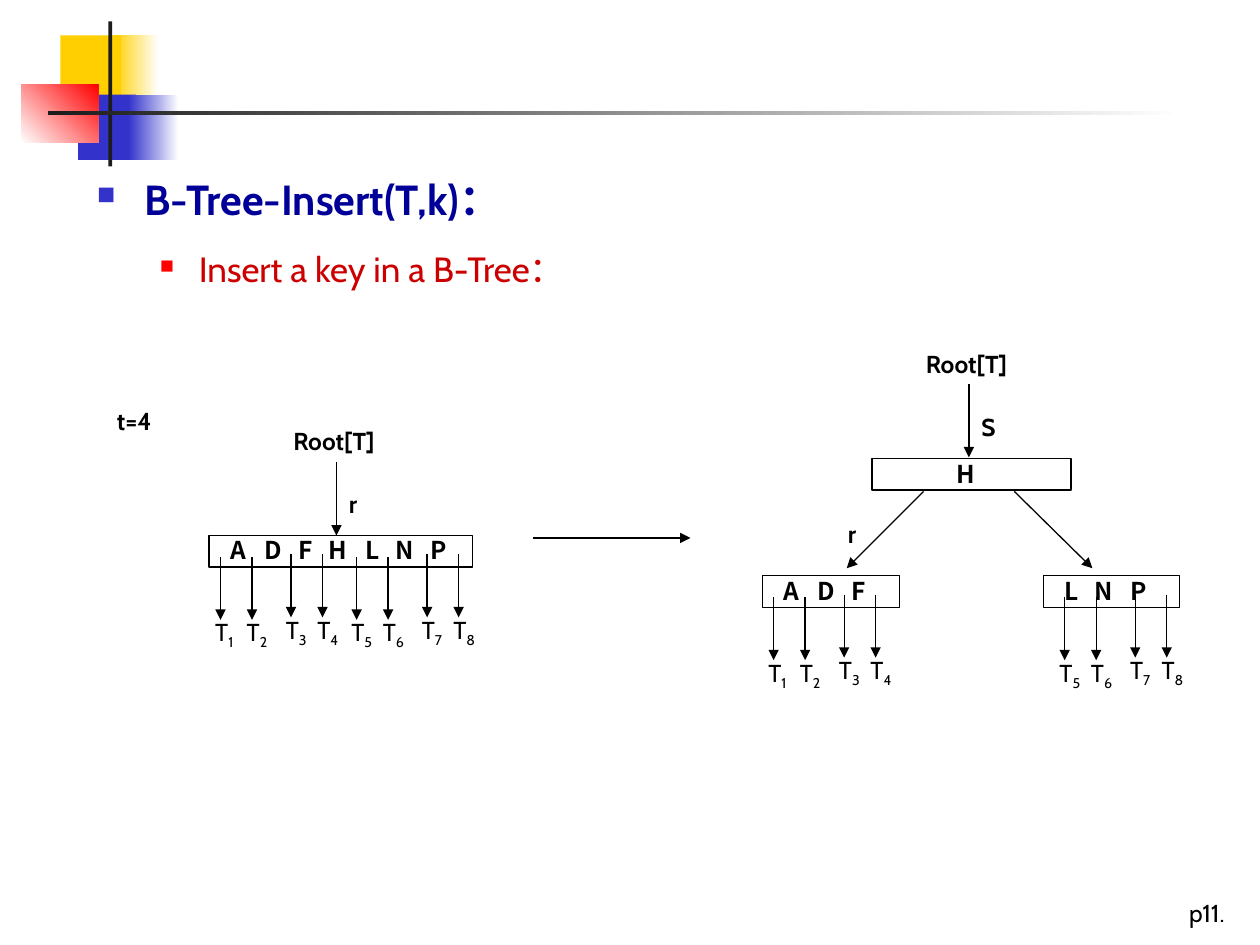
from lxml.etree import SubElement
from pptx import Presentation
from pptx.dml.color import RGBColor
from pptx.enum.shapes import MSO_CONNECTOR as CONN, MSO_SHAPE as SHAPE
from pptx.enum.text import MSO_AUTO_SIZE as AUTO
from pptx.oxml.ns import qn
from pptx.util import Inches, Pt

LATIN, CJK = "Cabin", "Noto Sans CJK TC"

# Decoration: left, top, width, height, start colour, end colour, angle
DECOR = [
    (0.90, 0.28, 0.36, 0.52, "FFCF01", "FFFFFF", 0),
    (0.48, 0.28, 0.48, 0.52, "FFCF01", None, 0),
    (0.62, 0.75, 0.46, 0.52, "3333CC", None, 0),
    (1.02, 0.75, 0.40, 0.52, "3333CC", "FFFFFF", 0),
    (0.17, 0.67, 0.61, 0.46, "FFFFFF", "FF0000", 45),
    (0.86, 0.17, 0.03, 1.15, "1C1C1C", None, 0),
    (0.38, 0.88, 9.00, 0.03, "1C1C1C", "FFFFFF", 0),
]

# Outline: text, size, bold, colour, bullet colour, bullet %, margin, hang, line spacing
OUTLINE = [
    ("B-Tree-Insert(T,k)：", 24, True, "000099", "3333CC", 60, 0.38, 0.38, 1.0),
    ("Insert a key in a B-Tree：", 20, False, "CC0000", "FF0000", 55, 0.81, 0.31, 1.4),
]

# Labels: text, left, top, width, bold
LABELS = [
    ("t=4", 0.83, 3.17, 0.57, True),
    ("Root[T]", 2.23, 3.33, 0.96, True),
    ("r", 2.67, 3.83, 0.29, True),
    ("Root[T]", 7.25, 2.72, 0.96, True),
    ("S", 7.69, 3.22, 0.32, True),
    ("r", 6.63, 4.07, 0.29, True),
    ("p11.", 9.34, 7.08, 0.66, False),
]

# Nodes: left, top, width, keys, left of keys, first subtree x, subtree numbers
NODES = [
    (1.66, 4.25, 2.09, "ADFHLNP", 1.83, 1.75, range(1, 9)),
    (6.92, 3.64, 1.58, "H", 7.59, 0, ()),
    (6.05, 4.57, 1.09, "ADF", 6.22, 6.14, range(1, 5)),
    (8.28, 4.57, 1.08, "LNP", 8.45, 8.45, range(5, 9)),
]
KEY_X = {"A": 0, "D": 0.27, "F": 0.54, "H": 0.78, "L": 1.07, "N": 1.31, "P": 1.59}
SUBTREE_X = (0, 0.25, 0.56, 0.81)
SUBTREE_PERIOD = 1.08

# Arrows: x1, y1, x2, y2
ARROWS = [
    (2.67, 3.67, 2.67, 4.25),
    (4.23, 4.27, 5.48, 4.27),
    (7.69, 3.05, 7.69, 3.63),
    (7.33, 3.90, 6.72, 4.51),
    (8.05, 3.90, 8.67, 4.51),
]

prs = Presentation()
prs.slide_width, prs.slide_height = Inches(10), Inches(7.5)
slide = prs.slides.add_slide(prs.slide_layouts[6])


def color(hex_value):
    return RGBColor.from_string(hex_value)


def style(r, size, bold, hex_value="000000", font=LATIN):
    r.font.size, r.font.bold, r.font.name = Pt(size), bold, font
    r.font.color.rgb = color(hex_value)
    SubElement(r.font._element, qn("a:ea")).set("typeface", CJK)


def add_rect(x, y, w, h):
    sp = slide.shapes.add_shape(SHAPE.RECTANGLE, *map(Inches, (x, y, w, h)))
    sp.shadow.inherit = False
    return sp


def add_text(x, y, w, h, text, bold=False, font=LATIN):
    tf = slide.shapes.add_textbox(*map(Inches, (x, y, w, h))).text_frame
    tf.word_wrap = False
    tf.auto_size = AUTO.SHAPE_TO_FIT_TEXT
    tf.text = text
    style(tf.paragraphs[0].runs[0], 14, bold, font=font)
    return tf


def add_arrow(*ends):
    line = slide.shapes.add_connector(CONN.STRAIGHT, *map(Inches, ends))
    line.line.color.rgb, line.line.width = color("000000"), Pt(0.75)
    SubElement(line.line._get_or_add_ln(), qn("a:tailEnd")).set("type", "triangle")
    SubElement(line._element.spPr, qn("a:effectLst"))


def add_subtree(x, y, number):
    add_arrow(x, y, x, y + 0.5)
    p = add_text(x - 0.14, y + 0.43, 0.38, 0.33, "T").paragraphs[0]
    r = p.add_run()
    r.text = str(number)
    style(r, 14, False)
    r.font._element.set("baseline", "-25000")


def add_node(x, y, w, keys, key_left, tree_left, numbers):
    box = add_rect(x, y, w, 0.25)
    box.fill.background()
    box.line.color.rgb, box.line.width = color("000000"), Pt(0.75)

    # Keys sit on tab stops
    tf = add_text(key_left, y, w, 0.23, "\t".join(keys), True, CJK)
    tf.margin_left = tf.margin_right = tf.margin_top = tf.margin_bottom = 0
    tf.word_wrap = True
    tabs = SubElement(tf.paragraphs[0]._p.get_or_add_pPr(), qn("a:tabLst"))
    for key in keys[1:]:
        tab = SubElement(tabs, qn("a:tab"))
        tab.set("pos", str(Inches(KEY_X[key] - KEY_X[keys[0]])))
        tab.set("algn", "l")

    # Every second pair of subtrees sits slightly higher
    for i, number in enumerate(numbers):
        block, place = divmod(i, 4)
        tree_x = tree_left + block * SUBTREE_PERIOD + SUBTREE_X[place]
        add_subtree(tree_x, y + (0.17 if place < 2 else 0.15), number)


# Decoration
for x, y, w, h, start, end, angle in DECOR:
    sp = add_rect(x, y, w, h)
    sp.line.fill.background()
    if end:
        sp.fill.gradient()
        sp.fill.gradient_angle = angle
        for stop, hex_value in zip(sp.fill.gradient_stops, (start, end)):
            stop.color.rgb = color(hex_value)
    else:
        sp.fill.solid()
        sp.fill.fore_color.rgb = color(start)

# Outline
tf = slide.shapes.add_textbox(*map(Inches, (0.67, 1.33, 8.67, 5.67))).text_frame
tf.word_wrap = True
for i, (text, size, bold, ink, bu_ink, bu_size, margin, hang, spacing) in enumerate(OUTLINE):
    p = tf.add_paragraph() if i else tf.paragraphs[0]
    p.text, p.level = text, i
    p.space_before, p.line_spacing = Pt(size * 0.2), spacing
    style(p.runs[0], size, bold, ink)
    pPr = p._p.get_or_add_pPr()
    pPr.set("marL", str(Inches(margin)))
    pPr.set("indent", str(Inches(-hang)))
    bu_clr = SubElement(pPr, qn("a:buClr"))
    SubElement(bu_clr, qn("a:srgbClr")).set("val", bu_ink)
    SubElement(pPr, qn("a:buSzPct")).set("val", str(bu_size * 1000))
    SubElement(pPr, qn("a:buChar")).set("char", "■")

# Trees
for node in NODES:
    add_node(*node)
for arrow in ARROWS:
    add_arrow(*arrow)
for text, x, y, w, bold in LABELS:
    add_text(x, y, w, 0.33, text, bold)

prs.save("out.pptx")
